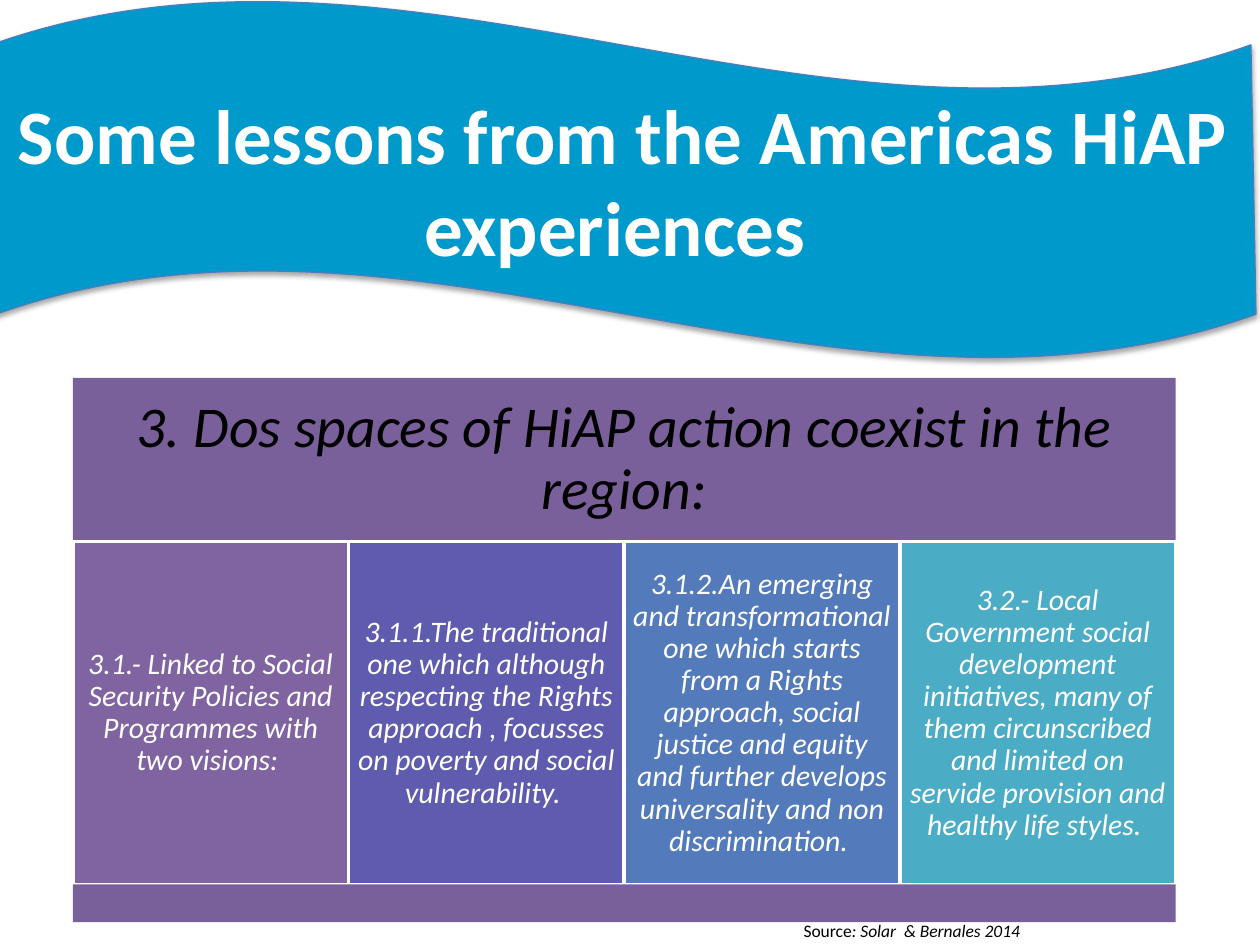
"""Build the slide on lessons from the HiAP experiences in the Americas."""
import lxml.etree
import pptx
import pptx.dml.color
import pptx.enum.shapes
import pptx.enum.text
import pptx.oxml
import pptx.oxml.ns
import pptx.util

Cm = pptx.util.Cm
Pt = pptx.util.Pt
RGBColor = pptx.dml.color.RGBColor
Shape = pptx.enum.shapes.MSO_SHAPE
CENTER = pptx.enum.text.PP_ALIGN.CENTER
LEFT = pptx.enum.text.PP_ALIGN.LEFT

BLUE = RGBColor(0x00, 0x99, 0xCC)
EDGE_BLUE = RGBColor(0x4B, 0x7E, 0xBC)
BAND_PURPLE = RGBColor(0x7A, 0x60, 0x9B)
PURPLE = RGBColor(0x80, 0x64, 0xA2)
INDIGO = RGBColor(0x5F, 0x5B, 0xAE)
STEEL = RGBColor(0x53, 0x7A, 0xBA)
TEAL = RGBColor(0x4B, 0xAC, 0xC6)
WHITE = RGBColor(0xFF, 0xFF, 0xFF)
BLACK = RGBColor(0x00, 0x00, 0x00)


def write(shape, runs, size, color, align, margins=(0.25, 0.13), **paragraph_format):
    side, edge = margins
    frame = shape.text_frame
    frame_format = {
        "word_wrap": True,
        "auto_size": pptx.enum.text.MSO_AUTO_SIZE.NONE,
        "vertical_anchor": pptx.enum.text.MSO_ANCHOR.MIDDLE,
        "margin_left": Cm(side),
        "margin_right": Cm(side),
        "margin_top": Cm(edge),
        "margin_bottom": Cm(edge),
    }
    for name, value in frame_format.items():
        setattr(frame, name, value)
    paragraph = frame.paragraphs[0]
    for name, value in {"alignment": align, **paragraph_format}.items():
        setattr(paragraph, name, value)
    for text, style in runs:
        run = paragraph.add_run()
        run.text = text
        run.font.color.rgb = color
        for name, value in {"name": "Calibri", "size": Pt(size), **style}.items():
            setattr(run.font, name, value)


def add_block(kind, left, top, width, height, fill, line=None, line_width=0):
    block = slide.shapes.add_shape(kind, Cm(left), Cm(top), Cm(width), Cm(height))
    block.shadow.inherit = False
    block.fill.solid()
    block.fill.fore_color.rgb = fill
    if line is None:
        block.line.fill.background()
    else:
        block.line.color.rgb = line
        block.line.width = Pt(line_width)
    return block


deck = pptx.Presentation()
deck.slide_width = Cm(25.4)
deck.slide_height = Cm(19.05)
slide = deck.slides.add_slide(deck.slide_layouts[5])

banner = add_block(Shape.WAVE, -0.18, 0, 25.5, 7.24, BLUE, EDGE_BLUE, 0.75)
banner.adjustments[0] = 0.125
banner.adjustments[1] = 0.002
effects = banner.element.spPr.find(pptx.oxml.ns.qn("a:effectLst"))
effects.append(pptx.oxml.parse_xml(
    f'<a:outerShdw {pptx.oxml.ns.nsdecls("a")} blurRad="{Pt(3.1)}" dist="{Pt(1.8)}" '
    'dir="5400000" rotWithShape="0"><a:srgbClr val="000000">'
    '<a:alpha val="35000"/></a:srgbClr></a:outerShdw>'
))

title = slide.shapes.title
title_place = {"left": Cm(-0.18), "top": Cm(0), "width": Cm(25.5), "height": Cm(7.24)}
for name, value in title_place.items():
    setattr(title, name, value)
write(title, [("Some lessons from the Americas HiAP experiences ", {"bold": True})],
      44, WHITE, CENTER)
banner.element.addnext(title.element)

table_left, table_width = 1.47, 22.23
heading_top, heading_height = 7.62, 3.3
columns_top, columns_height = heading_top + heading_height, 6.91

heading = add_block(Shape.RECTANGLE, table_left, heading_top, table_width,
                    heading_height, BAND_PURPLE)
write(heading, [("3. Dos spaces of HiAP action coexist in the region:", {"italic": True})],
      33, BLACK, CENTER, (0.36, 0.36), line_spacing=0.9)

lessons = [
    ("3.1.- Linked to Social Security Policies and Programmes with two visions: ", PURPLE),
    ("3.1.1.The traditional one which although respecting the Rights approach , "
     "focusses on poverty and social vulnerability. ", INDIGO),
    ("3.1.2.An emerging and transformational one which starts from a Rights approach, "
     "social justice and equity and further develops universality and non "
     "discrimination. ", STEEL),
    ("3.2.- Local Government social development initiatives, many of them circunscribed "
     "and limited on servide provision and healthy life styles. ", TEAL),
]
column_width = table_width / len(lessons)
for index, (lesson, fill) in enumerate(lessons):
    column = add_block(Shape.RECTANGLE, table_left + index * column_width, columns_top,
                       column_width, columns_height, fill, WHITE, 2)
    write(column, [(lesson, {"italic": True})], 17, WHITE, CENTER, (0.18, 0.18),
          line_spacing=0.9)

add_block(Shape.RECTANGLE, table_left, columns_top + columns_height, table_width, 0.76,
          BAND_PURPLE)

source = slide.shapes.add_textbox(Cm(15.95), Cm(18.36), Cm(9.4), Cm(0.79))
write(source, [("Source", {}), (": Solar  & Bernales 2014", {"italic": True})],
      10, BLACK, LEFT)

deck.save("out.pptx")
